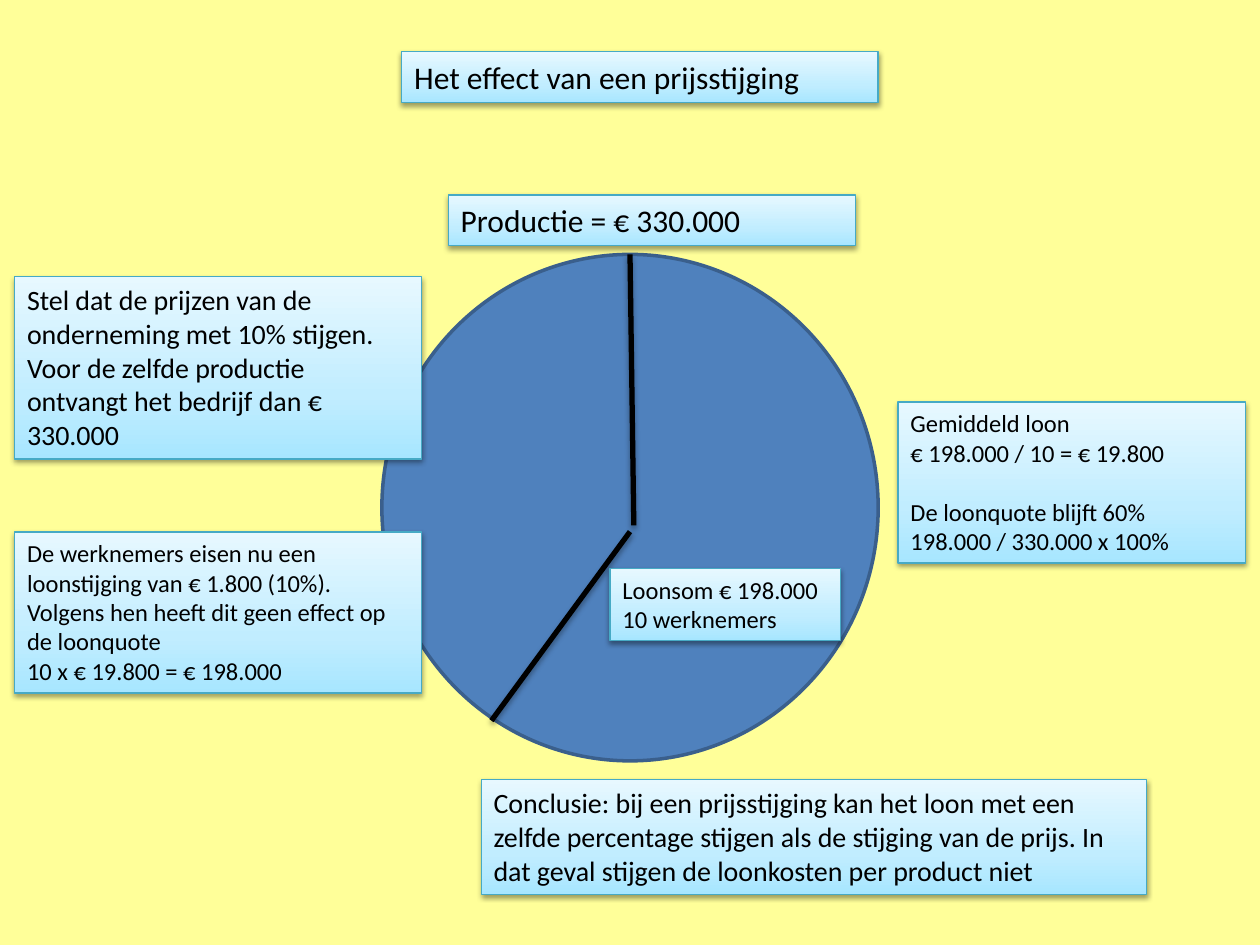
from dataclasses import dataclass

from pptx import Presentation
from pptx.dml.color import RGBColor
from pptx.enum.shapes import MSO_CONNECTOR, MSO_SHAPE
from pptx.enum.text import MSO_ANCHOR, MSO_AUTO_SIZE, PP_ALIGN
from pptx.oxml import parse_xml
from pptx.oxml.ns import nsdecls
from pptx.util import Pt


@dataclass(frozen=True)
class Theme:
    background: str = "FFFF99"
    circle: str = "4F81BD"
    circle_line: str = "3A5F8C"
    box_line: str = "46AAC5"
    gradient: tuple = ((0, "A7E6FF"), (35, "C1EDFF"), (100, "E7F8FF"))
    ink: str = "000000"
    font: str = "Calibri"
    title: int = 18
    body: int = 16
    small: int = 14


class Deck:
    """Draws themed elements on the current slide."""

    def __init__(self, prs, theme):
        self.theme = theme
        self.s = prs.slides.add_slide(prs.slide_layouts[6])
        fill = self.s.background.fill
        fill.solid()
        fill.fore_color.rgb = RGBColor.from_string(theme.background)

    def outline(self, sp, color, width):
        sp.line.color.rgb = RGBColor.from_string(color)
        sp.line.width = Pt(width)

    def shadow(self, sp, alpha, distance):
        sp._element.spPr.append(parse_xml(
            f'<a:effectLst {nsdecls("a")}><a:outerShdw blurRad="{Pt(3.1)}" '
            f'dist="{Pt(distance)}" dir="5400000" rotWithShape="0">'
            f'<a:srgbClr val="{self.theme.ink}"><a:alpha val="{alpha * 1000}"/></a:srgbClr>'
            '</a:outerShdw></a:effectLst>'))

    def circle(self, *at):
        sp = self.s.shapes.add_shape(MSO_SHAPE.OVAL, *map(Pt, at))
        sp.shadow.inherit = False
        sp.fill.solid()
        sp.fill.fore_color.rgb = RGBColor.from_string(self.theme.circle)
        self.outline(sp, self.theme.circle_line, 2)

    def line(self, *ends):
        cx = self.s.shapes.add_connector(MSO_CONNECTOR.STRAIGHT, *map(Pt, ends))
        self.outline(cx, self.theme.ink, 3)
        self.shadow(cx, 35, 1.8)

    def box(self, at, size, *lines, gap_before=None):
        sp = self.s.shapes.add_shape(MSO_SHAPE.RECTANGLE, *map(Pt, at))
        stops = "".join(f'<a:gs pos="{pos * 1000}"><a:srgbClr val="{color}"/></a:gs>'
                        for pos, color in self.theme.gradient)
        sp._element.spPr.append(parse_xml(
            f'<a:gradFill {nsdecls("a")} rotWithShape="1"><a:gsLst>{stops}</a:gsLst>'
            '<a:lin ang="16200000" scaled="1"/></a:gradFill>'))
        self.outline(sp, self.theme.box_line, 0.75)
        self.shadow(sp, 38, 1.6)
        tf = sp.text_frame
        tf.text = "\n".join(lines)
        tf.word_wrap = True
        tf.auto_size = MSO_AUTO_SIZE.SHAPE_TO_FIT_TEXT
        tf.vertical_anchor = MSO_ANCHOR.TOP
        for i, p in enumerate(tf.paragraphs):
            p.alignment = PP_ALIGN.LEFT
            if i == gap_before:
                p.space_before = Pt(size * 1.22)
            for r in p.runs:
                r.font.name = self.theme.font
                r.font.size = Pt(size)
                r.font.color.rgb = RGBColor.from_string(self.theme.ink)


def main():
    prs = Presentation()
    prs.slide_width, prs.slide_height = Pt(720), Pt(540)
    theme = Theme()
    deck = Deck(prs, theme)
    deck.circle(218.2, 145.4, 283.6, 289.4)
    deck.line(360, 145.4, 362.2, 300.2)
    deck.line(360, 303.8, 280.8, 411.8)
    deck.box((348.6, 324.8, 131.8, 41.2), theme.small,
             "Loonsom € 198.000", "10 werknemers")
    deck.box((256.2, 111.4, 232.6, 29.1), theme.title, "Productie = € 330.000")
    deck.box((513.2, 229.8, 198.6, 92), theme.small,
             "Gemiddeld loon", "€ 198.000 / 10 = € 19.800",
             "De loonquote blijft 60%", "198.000 / 330.000 x 100%", gap_before=2)
    deck.box((8.4, 158.2, 232.6, 104.2), theme.body,
             "Stel dat de prijzen van de onderneming met 10% stijgen. Voor de zelfde "
             "productie ontvangt het bedrijf dan € 330.000")
    deck.box((8.4, 304, 232.6, 92), theme.small,
             "De werknemers eisen nu een loonstijging van € 1.800 (10%).",
             "Volgens hen heeft dit geen effect op de loonquote",
             "10 x € 19.800 = € 198.000")
    deck.box((229.6, 29.6, 272.2, 29.1), theme.title, "Het effect van een prijsstijging")
    deck.box((275, 445.6, 380, 65.4), theme.body,
             "Conclusie: bij een prijsstijging kan het loon met een zelfde percentage "
             "stijgen als de stijging van de prijs. In dat geval stijgen de loonkosten "
             "per product niet")
    prs.save("out.pptx")


if __name__ == "__main__":
    main()
